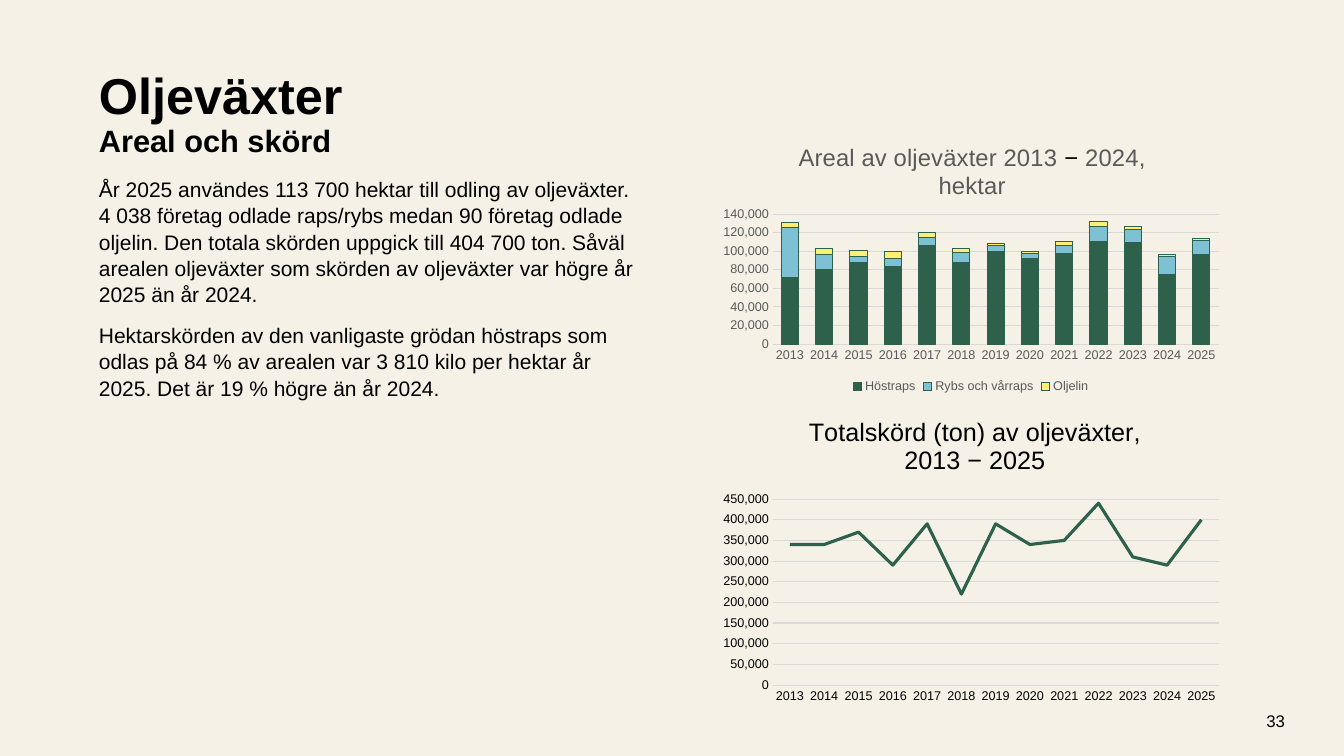
import lxml.etree
import pptx
import pptx.chart.data
import pptx.dml.color
import pptx.enum.chart
import pptx.enum.text
import pptx.oxml.ns
import pptx.util

RGBColor = pptx.dml.color.RGBColor
BACKGROUND = RGBColor(0xF5, 0xF1, 0xE7)
BLACK = RGBColor(0, 0, 0)
GRAY = RGBColor(0x59, 0x59, 0x59)
GRID = RGBColor(0xD9, 0xD9, 0xD9)
GREEN = RGBColor(0x2E, 0x61, 0x4C)
BLUE = RGBColor(0x7F, 0xC1, 0xD4)
YELLOW = RGBColor(0xFB, 0xEF, 0x74)

FONT = "Arial"
EMU_PER_PX = 914400 / 100.8
YEARS = [str(year) for year in range(2013, 2026)]

AREAS = [
    ("Höstraps", GREEN, [72000, 80000, 88000, 83000, 106000, 88000, 100000,
                         92000, 97000, 110000, 109000, 75000, 96000]),
    ("Rybs och vårraps", BLUE, [54000, 16000, 6000, 9000, 9000, 11000, 6000,
                                6000, 9000, 17000, 14000, 19000, 16000]),
    ("Oljelin", YELLOW, [5000, 7000, 7000, 8000, 5000, 4000, 2000,
                         2000, 4000, 5000, 4000, 2000, 2000]),
]
HARVEST = [
    ("Totalskörd", GREEN, [340000, 340000, 370000, 290000, 390000, 220000, 390000,
                           340000, 350000, 440000, 310000, 290000, 400000]),
]
BODY = [
    "År 2025 användes 113 700 hektar till odling av oljeväxter. 4 038 företag odlade "
    "raps/rybs medan 90 företag odlade oljelin. Den totala skörden uppgick till "
    "404 700 ton. Såväl arealen oljeväxter som skörden av oljeväxter var högre år "
    "2025 än år 2024.",
    "Hektarskörden av den vanligaste grödan höstraps som odlas på 84 % av arealen var "
    "3 810 kilo per hektar år 2025. Det är 19 % högre än år 2024.",
]


def px(value):
    return pptx.util.Emu(round(value * EMU_PER_PX))


def set_font(font, size, color, bold=False):
    font.name = FONT
    font.size = pptx.util.Pt(size)
    font.bold = bold
    font.color.rgb = color


def set_line(line, color, width=0.75):
    line.color.rgb = color
    line.width = pptx.util.Pt(width)


def add_text_frame(slide, box, anchor):
    text_frame = slide.shapes.add_textbox(*map(px, box)).text_frame
    text_frame.word_wrap = True
    text_frame.vertical_anchor = anchor
    return text_frame


def add_heading(slide, box, title, subtitle):
    text_frame = add_text_frame(slide, box, pptx.enum.text.MSO_ANCHOR.BOTTOM)
    paragraph = text_frame.paragraphs[0]
    paragraph.line_spacing = 0.9
    set_font(paragraph.font, 36, BLACK, bold=True)
    paragraph.add_run().text = title
    paragraph.add_line_break()
    run = paragraph.add_run()
    run.text = subtitle
    run.font.size = pptx.util.Pt(22)


def add_body(slide, box, texts):
    text_frame = add_text_frame(slide, box, pptx.enum.text.MSO_ANCHOR.TOP)
    for index, text in enumerate(texts):
        paragraph = text_frame.add_paragraph() if index else text_frame.paragraphs[0]
        paragraph.text = text
        paragraph.line_spacing = 1.05
        if index:
            paragraph.space_before = pptx.util.Pt(10)
        set_font(paragraph.font, 15, BLACK)


def add_page_number(slide, box, number):
    text_frame = add_text_frame(slide, box, pptx.enum.text.MSO_ANCHOR.MIDDLE)
    paragraph = text_frame.paragraphs[0]
    paragraph.text = number
    paragraph.alignment = pptx.enum.text.PP_ALIGN.RIGHT
    set_font(paragraph.font, 12, BLACK)


def set_layout(element, index, **settings):
    qn = pptx.oxml.ns.qn
    for old_layout in element.findall(qn("c:layout")):
        element.remove(old_layout)
    layout = lxml.etree.Element(qn("c:layout"))
    manual = lxml.etree.SubElement(layout, qn("c:manualLayout"))
    for name, value in settings.items():
        lxml.etree.SubElement(manual, qn(f"c:{name}")).set("val", str(value))
    element.insert(index, layout)


def add_chart(slide, chart_type, box, plot_box, series_data, color):
    data = pptx.chart.data.CategoryChartData(number_format="#,##0")
    data.categories = YEARS
    for name, _, values in series_data:
        data.add_series(name, values)
    chart = slide.shapes.add_chart(chart_type, *map(px, box), data).chart
    set_font(chart.font, 10, BLACK)
    chart.has_legend = False
    chart.plots[0].vary_by_categories = False
    for axis in (chart.category_axis, chart.value_axis):
        axis.major_tick_mark = pptx.enum.chart.XL_TICK_MARK.NONE
        axis.minor_tick_mark = pptx.enum.chart.XL_TICK_MARK.NONE
        set_font(axis.tick_labels.font, 9, color)
    set_line(chart.category_axis.format.line, GRID)
    value_axis = chart.value_axis
    value_axis.format.line.fill.background()
    value_axis.minimum_scale = 0
    set_line(value_axis.major_gridlines.format.line, GRID)
    value_axis.tick_labels.number_format = "#,##0"
    value_axis.tick_labels.number_format_is_linked = False
    left, top, width, height = box
    plot_left, plot_top, plot_width, plot_height = plot_box
    set_layout(chart._chartSpace.chart.plotArea, 0,
               layoutTarget="inner", xMode="edge", yMode="edge",
               x=round((plot_left - left) / width, 3),
               y=round((plot_top - top) / height, 3),
               w=round(plot_width / width, 3),
               h=round(plot_height / height, 3))
    return chart


def add_chart_title(chart, lines, size, x, y):
    chart.has_title = True
    title = chart.chart_title
    text_frame = title.text_frame
    for index, line in enumerate(lines):
        paragraph = text_frame.add_paragraph() if index else text_frame.paragraphs[0]
        for text, color in line:
            run = paragraph.add_run()
            run.text = text
            set_font(run.font, size, color)
    set_layout(title._element, 1, xMode="edge", yMode="edge", x=x, y=y)


def add_area_chart(slide):
    chart = add_chart(slide, pptx.enum.chart.XL_CHART_TYPE.COLUMN_STACKED,
                      (713, 126, 516, 272), (773, 214, 446, 130), AREAS, GRAY)
    title = [[("Areal av oljeväxter 2013 ", GRAY), ("−", BLACK), (" 2024, hektar", GRAY)]]
    add_chart_title(chart, title, 17, 0.16, 0.05)
    plot = chart.plots[0]
    plot.gap_width = 100
    plot.overlap = 100
    for series, (_, color, _) in zip(plot.series, AREAS):
        series.format.fill.solid()
        series.format.fill.fore_color.rgb = color
        set_line(series.format.line, GREEN)
    chart.value_axis.maximum_scale = 140000
    chart.value_axis.major_unit = 20000
    chart.has_legend = True
    chart.legend.position = pptx.enum.chart.XL_LEGEND_POSITION.BOTTOM
    chart.legend.include_in_layout = False
    set_font(chart.legend.font, 9, GRAY)


def add_harvest_chart(slide):
    chart = add_chart(slide, pptx.enum.chart.XL_CHART_TYPE.LINE,
                      (713, 407, 516, 302), (773, 499, 446, 186), HARVEST, BLACK)
    title = [[("Totalskörd (ton) av oljeväxter,", BLACK)], [("2013 − 2025", BLACK)]]
    add_chart_title(chart, title, 18, 0.18, 0.02)
    series = chart.plots[0].series[0]
    series.smooth = False
    series.marker.style = pptx.enum.chart.XL_MARKER_STYLE.NONE
    set_line(series.format.line, GREEN, 2.25)
    chart.value_axis.maximum_scale = 450000
    chart.value_axis.major_unit = 50000


def main():
    presentation = pptx.Presentation()
    presentation.slide_width = px(1344)
    presentation.slide_height = px(756)
    slide = presentation.slides.add_slide(presentation.slide_layouts[6])
    slide.background.fill.solid()
    slide.background.fill.fore_color.rgb = BACKGROUND
    add_heading(slide, (89, 52, 1027, 112), "Oljeväxter", "Areal och skörd")
    add_page_number(slide, (1178, 701, 117, 40), "33")
    add_body(slide, (89, 170, 562, 237), BODY)
    add_area_chart(slide)
    add_harvest_chart(slide)
    presentation.save("out.pptx")


if __name__ == "__main__":
    main()
